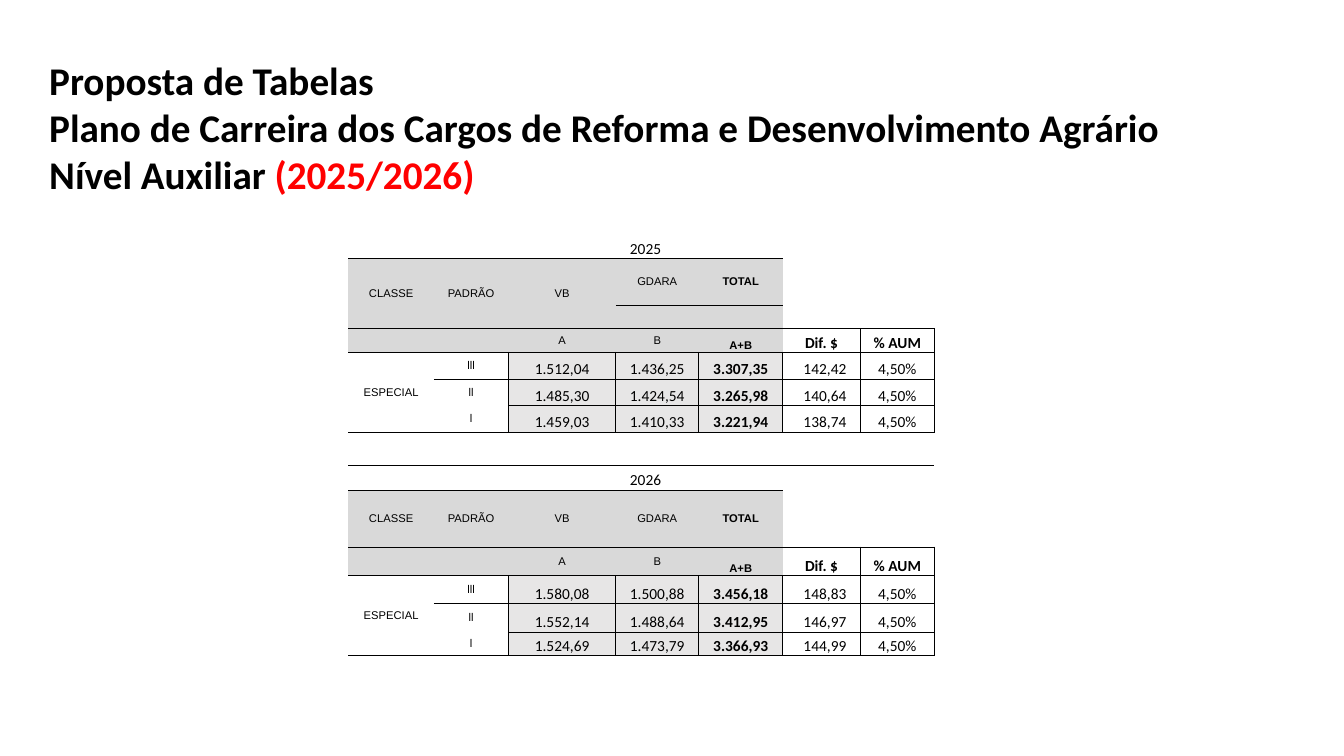
"""Build a slide with the 2025 and 2026 salary tables for the auxiliary level."""
from collections import defaultdict

from lxml import etree
from pptx import Presentation
from pptx.dml.color import RGBColor
from pptx.enum.text import MSO_ANCHOR, MSO_AUTO_SIZE, PP_ALIGN
from pptx.oxml.ns import qn
from pptx.util import Pt

CENTER = PP_ALIGN.CENTER
MIDDLE = MSO_ANCHOR.MIDDLE
BOTTOM = MSO_ANCHOR.BOTTOM
GROW = MSO_AUTO_SIZE.SHAPE_TO_FIT_TEXT

COLORS = {"black": "000000", "red": "FF0000", "header": "D9D9D9",
          "salary": "E7E6E6", "white": "FFFFFF"}
TITLE = [
    [("Proposta de Tabelas", "black")],
    [("Plano de Carreira dos Cargos de Reforma e Desenvolvimento Agrário", "black")],
    [("Nível Auxiliar ", "black"), ("(2025/2026)", "red")],
]
HEADERS = ["CLASSE", "PADRÃO", "VB", "GDARA", "TOTAL"]
FORMULAS = ["", "", "A", "B", "A+B", "Dif. $", "% AUM"]
CLASS_NAME = "ESPECIAL"
BLOCKS = [
    {"year": "2025", "first_row": 0, "header_rows": 3, "salaries": [
        ["lll", "1.512,04", "1.436,25", "3.307,35", "142,42", "4,50%"],
        ["ll", "1.485,30", "1.424,54", "3.265,98", "140,64", "4,50%"],
        ["l", "1.459,03", "1.410,33", "3.221,94", "138,74", "4,50%"]]},
    {"year": "2026", "first_row": 9, "header_rows": 2, "salaries": [
        ["lll", "1.580,08", "1.500,88", "3.456,18", "148,83", "4,50%"],
        ["ll", "1.552,14", "1.488,64", "3.412,95", "146,97", "4,50%"],
        ["l", "1.524,69", "1.473,79", "3.366,93", "144,99", "4,50%"]]},
]
COLUMN_WIDTHS = [61, 53.3, 76.7, 59.3, 60, 55.4, 53]
ROW_HEIGHTS = [24] + [16.8] * 4 + [19] * 3 + [23.5, 18] + [20.3] * 5 + [16.5]
VB, TOTAL, DIFFERENCE = 2, 4, 5
COLUMN_COUNT = len(COLUMN_WIDTHS)
NO_TABLE_STYLE = "{2D5ABB26-0587-4C30-8999-92F81FD0307C}"
SIDES = ["L", "R", "T", "B"]


def rgb(name):
    return RGBColor.from_string(COLORS[name])


def set_font(font, name, size, bold):
    font.name, font.size, font.bold = name, Pt(size), bold


def add_title(slide):
    box = slide.shapes.add_textbox(Pt(28.1), Pt(36.7), Pt(922.3), Pt(108.7))
    frame = box.text_frame
    frame.word_wrap = True
    frame.auto_size = GROW
    for index, line in enumerate(TITLE):
        paragraph = frame.paragraphs[0] if index == 0 else frame.add_paragraph()
        set_font(paragraph.font, "Calibri", 28, True)
        for text, color in line:
            run = paragraph.add_run()
            run.text = text
            run.font.color.rgb = rgb(color)


def write(cell, text, name="Arial", size=8, bold=False, anchor=MIDDLE):
    paragraph = cell.text_frame.paragraphs[0]
    paragraph.text = text
    paragraph.alignment = CENTER
    set_font(paragraph.font, name, size, bold)
    paragraph.font.color.rgb = rgb("black")
    cell.vertical_anchor = anchor


def paint(cell, color):
    cell.fill.solid()
    cell.fill.fore_color.rgb = rgb(color)


def draw_borders(cell, sides):
    properties = cell._tc.get_or_add_tcPr()
    for position, side in enumerate(side for side in SIDES if side in sides):
        line = etree.Element(qn("a:ln" + side), w=str(Pt(0.5)))
        fill = etree.SubElement(line, qn("a:solidFill"))
        etree.SubElement(fill, qn("a:srgbClr"), val=COLORS["black"])
        properties.insert(position, line)


def fill_block(table, block, borders):
    year_row = block["first_row"]
    header_row = year_row + 1
    formula_row = header_row + block["header_rows"]
    salary_row = formula_row + 1
    end_row = salary_row + len(block["salaries"])

    def horizontal(row, first, last):
        for column in range(first, last + 1):
            borders[row - 1, column].add("B")
            borders[row, column].add("T")

    def vertical(column, first):
        for row in range(first, end_row):
            borders[row, column - 1].add("R")
            if column < COLUMN_COUNT:
                borders[row, column].add("L")

    def merge(row, column, last_row, last_column):
        table.cell(row, column).merge(table.cell(last_row, last_column))
        borders[row, column] |= borders[last_row, last_column]

    horizontal(header_row, 0, TOTAL)
    horizontal(header_row + 2, VB + 1, TOTAL)
    horizontal(formula_row, DIFFERENCE, COLUMN_COUNT - 1)
    horizontal(salary_row, 0, COLUMN_COUNT - 1)
    for row in range(salary_row + 1, end_row):
        horizontal(row, VB, COLUMN_COUNT - 1)
    horizontal(end_row, 0, COLUMN_COUNT - 1)
    for column in range(VB, COLUMN_COUNT + 1):
        vertical(column, formula_row if column > DIFFERENCE else salary_row)

    write(table.cell(year_row, VB), block["year"], "Calibri", 11, anchor=BOTTOM)
    merge(year_row, VB, year_row, TOTAL)
    for column, text in enumerate(HEADERS):
        for row in range(header_row, salary_row):
            paint(table.cell(row, column), "header")
        write(table.cell(header_row, column), text, bold=column == TOTAL)
        last_row = formula_row - 1 if column <= VB else header_row + 1
        merge(header_row, column, last_row, column)
    for column, text in enumerate(FORMULAS):
        name, size = ("Calibri", 11) if column >= DIFFERENCE else ("Arial", 8)
        write(table.cell(formula_row, column), text, name, size,
              column >= TOTAL, BOTTOM if column >= TOTAL else MIDDLE)
    write(table.cell(salary_row, 0), CLASS_NAME)
    merge(salary_row, 0, end_row - 1, 0)
    for row, (level, *amounts) in enumerate(block["salaries"], salary_row):
        write(table.cell(row, 1), level)
        for column, amount in enumerate(amounts, VB):
            cell = table.cell(row, column)
            write(cell, amount, "Calibri", 11, column == TOTAL, BOTTOM)
            paint(cell, "salary" if column <= TOTAL else "white")
        table.cell(row, DIFFERENCE).margin_left = Pt(5)


def add_salary_table(slide):
    frame = slide.shapes.add_table(
        len(ROW_HEIGHTS), COLUMN_COUNT, Pt(248.9), Pt(160.5),
        Pt(sum(COLUMN_WIDTHS)), Pt(sum(ROW_HEIGHTS)))
    table = frame.table
    table.first_row = table.horz_banding = False
    table._tbl.tblPr.find(qn("a:tableStyleId")).text = NO_TABLE_STYLE
    for column, width in zip(table.columns, COLUMN_WIDTHS):
        column.width = Pt(width)
    for row, height in zip(table.rows, ROW_HEIGHTS):
        row.height = Pt(height)
    for cell in table.iter_cells():
        cell.margin_left = cell.margin_right = cell.margin_top = cell.margin_bottom = 0
        cell.fill.background()
        write(cell, "")
    borders = defaultdict(set)
    for block in BLOCKS:
        fill_block(table, block, borders)
    for (row, column), sides in borders.items():
        if row < len(ROW_HEIGHTS):
            draw_borders(table.cell(row, column), sides)


def main():
    presentation = Presentation()
    presentation.slide_width, presentation.slide_height = Pt(960), Pt(540)
    slide = presentation.slides.add_slide(presentation.slide_layouts[6])
    add_title(slide)
    add_salary_table(slide)
    presentation.save("out.pptx")


if __name__ == "__main__":
    main()
